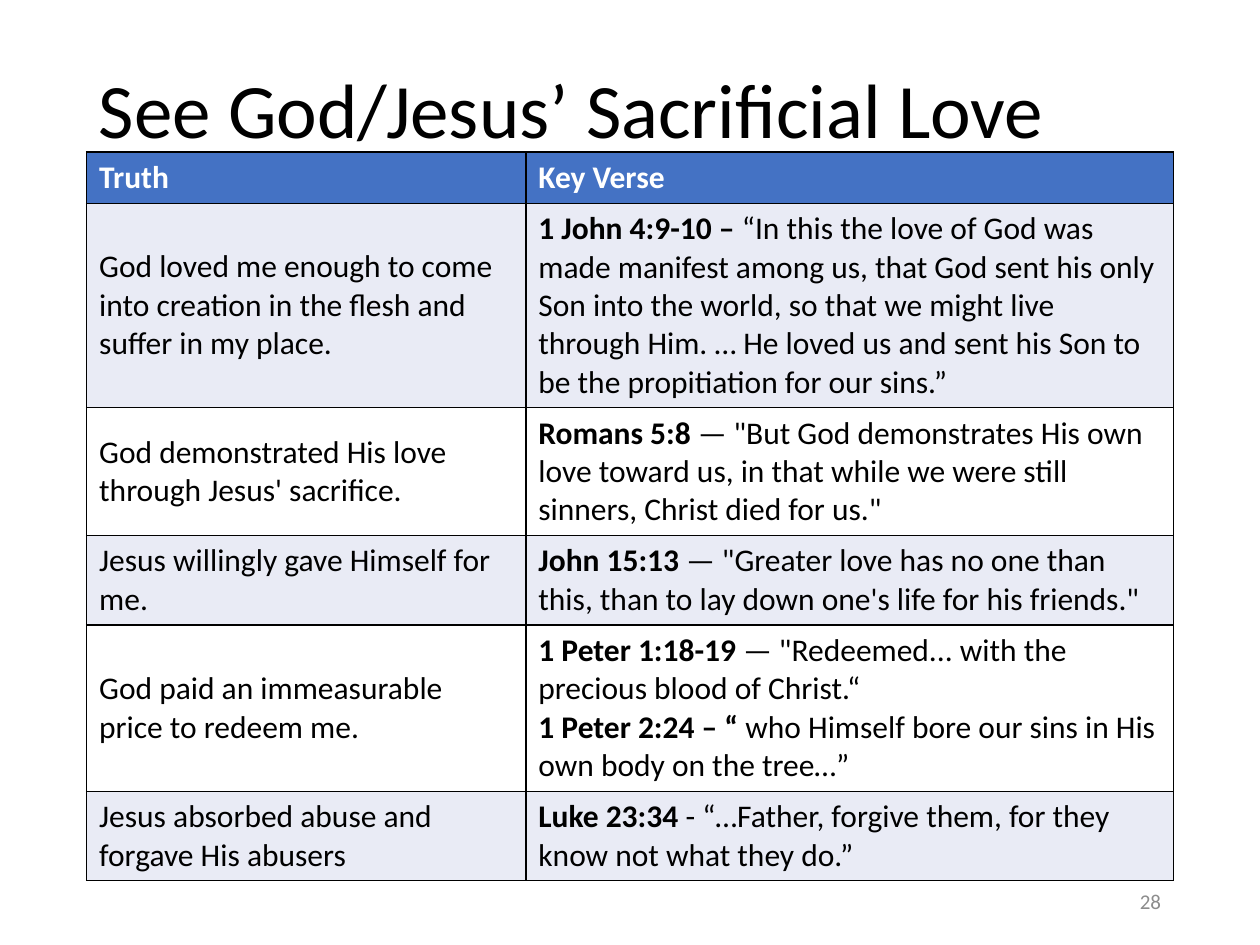
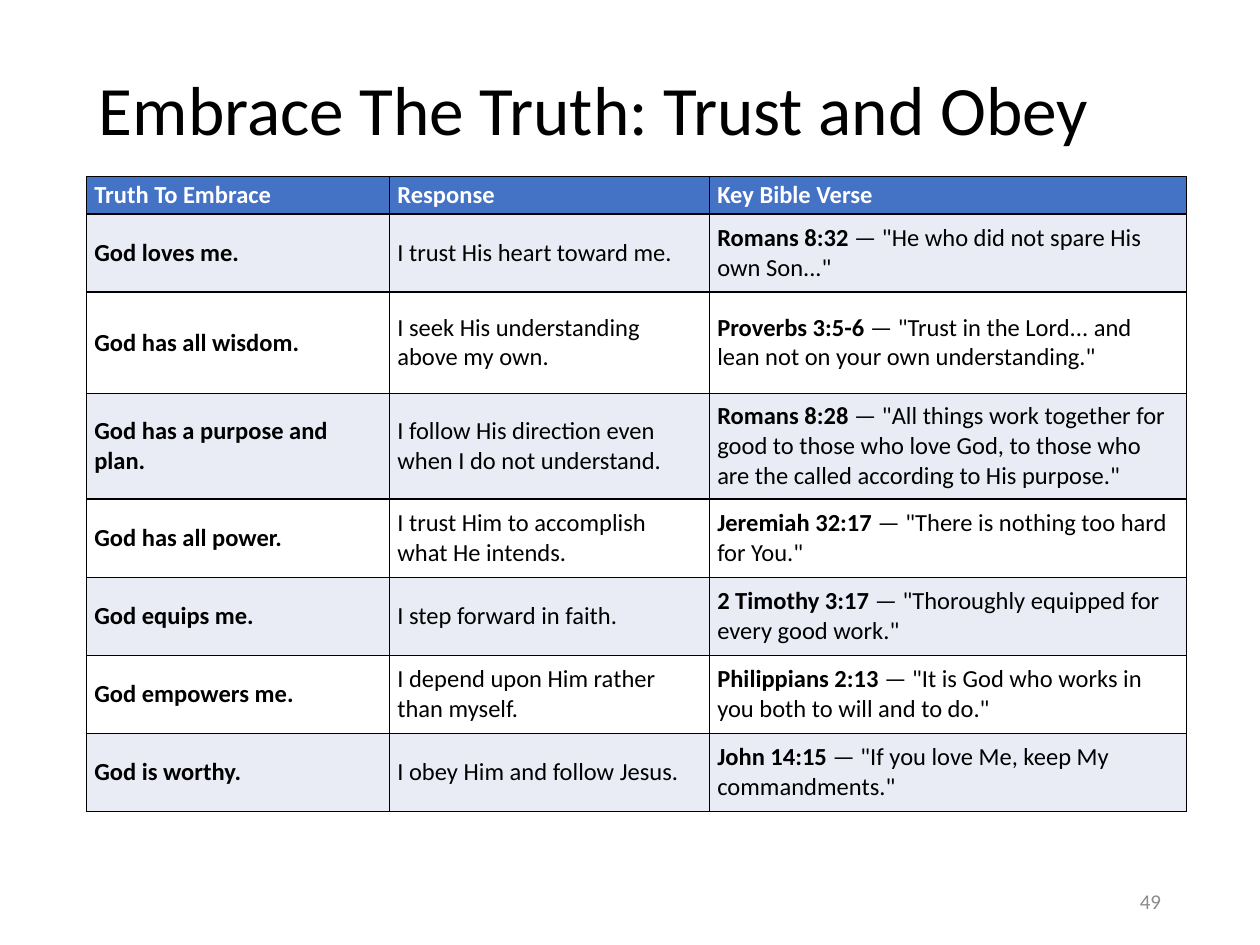
from lxml import etree
from pptx import Presentation
from pptx.dml.color import RGBColor
from pptx.enum.text import MSO_ANCHOR, PP_ALIGN
from pptx.oxml.ns import qn
from pptx.util import Pt

MIDDLE = MSO_ANCHOR.MIDDLE
LEFT = PP_ALIGN.LEFT
RIGHT = PP_ALIGN.RIGHT
BLACK = RGBColor(0x00, 0x00, 0x00)
WHITE = RGBColor(0xFF, 0xFF, 0xFF)
BLUE = RGBColor(0x44, 0x72, 0xC4)
PALE = RGBColor(0xE9, 0xEB, 0xF5)
GRAY = RGBColor(0x8C, 0x8C, 0x8C)
FONT = "Calibri"
EDGE = 49.5
WIDTH = 621

LOVE = [
    ["Truth|", "Key Verse|"],
    ["God loved me enough to come into creation in the flesh and suffer in my place.",
     "1 John 4:9-10 –| “In this the love of God was made manifest among us, that God "
     "sent his only Son into the world, so that we might live through Him. … He loved "
     "us and sent his Son to be the propitiation for our sins.”"],
    ["God demonstrated His love through Jesus' sacrifice.",
     "Romans 5:8| — \"But God demonstrates His own love toward us, in that while we "
     "were still sinners, Christ died for us.\""],
    ["Jesus willingly gave Himself for me.",
     "John 15:13| — \"Greater love has no one than this, than to lay down one's life "
     "for his friends.\""],
    ["God paid an immeasurable price to redeem me.",
     "1 Peter 1:18-19| — \"Redeemed... with the precious blood of Christ.“\n"
     "1 Peter 2:24 – “| who Himself bore our sins in His own body on the tree…”"],
    ["Jesus absorbed abuse and forgave His abusers",
     "Luke 23:34| - “…Father, forgive them, for they know not what they do.”"],
]

TRUST = [
    ["Truth To Embrace|", "Response|", "Key Bible Verse|"],
    ["God loves me.|", "I trust His heart toward me.",
     "Romans 8:32| — \"He who did not spare His own Son...\""],
    ["God has all wisdom.|", "I seek His understanding above my own.",
     "Proverbs 3:5-6| — \"Trust in the Lord... and lean not on your own understanding.\""],
    ["God has a purpose and plan.|",
     "I follow His direction even when I do not understand.",
     "Romans 8:28| — \"All things work together for good to those who love God, to "
     "those who are the called according to His purpose.\""],
    ["God has all power.|", "I trust Him to accomplish what He intends.",
     "Jeremiah 32:17| — \"There is nothing too hard for You.\""],
    ["God equips me.|", "I step forward in faith.",
     "2 Timothy 3:17| — \"Thoroughly equipped for every good work.\""],
    ["God empowers me.|", "I depend upon Him rather than myself.",
     "Philippians 2:13| — \"It is God who works in you both to will and to do.\""],
    ["God is worthy.|", "I obey Him and follow Jesus.",
     "John 14:15| — \"If you love Me, keep My commandments.\""],
]


def style(para, size, color):
    """Set the font of a whole paragraph."""
    para.font.name = FONT
    para.font.size = Pt(size)
    para.font.color.rgb = color


def add_text(slide, text, box, size, color, align=LEFT):
    """Add a one-line text box and return its paragraph."""
    frame = slide.shapes.add_textbox(*map(Pt, box)).text_frame
    frame.word_wrap = True
    frame.vertical_anchor = MIDDLE
    para = frame.paragraphs[0]
    para.text = text
    para.alignment = align
    style(para, size, color)
    return para


def add_frame(prs, title, size, page):
    """Add a slide with its title and page number."""
    slide = prs.slides.add_slide(prs.slide_layouts[6])
    para = add_text(slide, title, (EDGE, 28.75, WIDTH, 72), size, BLACK)
    para.line_spacing = 0.9
    add_text(slide, page, (508.5, 500.5, 162, 28.75), 12, GRAY, RIGHT)
    return slide


def add_rules(cell):
    """Draw a thin black line on each side of a cell."""
    props = cell._tc.get_or_add_tcPr()
    for side in ("a:lnL", "a:lnR", "a:lnT", "a:lnB"):
        line = etree.SubElement(props, qn(side), w=str(Pt(1)))
        fill = etree.SubElement(line, qn("a:solidFill"))
        etree.SubElement(fill, qn("a:srgbClr"), val=str(BLACK))


def fill_cell(cell, text, size, color):
    """Write lines into a cell, bold up to the bar in each."""
    frame = cell.text_frame
    for num, line in enumerate(text.split("\n")):
        para = frame.add_paragraph() if num else frame.paragraphs[0]
        style(para, size, color)
        lead, bar, rest = line.partition("|")
        if not (bar and rest):
            para.font.bold = bool(bar)
            para.add_run().text = lead
            continue
        for part, bold in ((lead, True), (rest, False)):
            run = para.add_run()
            run.text = part
            run.font.bold = bold


def add_grid(slide, data, top, cols, rows, size, inset=(7.2, 3.6)):
    """Add a ruled table with a blue head and pale bands."""
    box = (EDGE, top, sum(cols), sum(rows))
    table = slide.shapes.add_table(len(rows), len(cols), *map(Pt, box)).table
    table.first_row = table.horz_banding = False
    for col, width in zip(table.columns, cols):
        col.width = Pt(width)
    for num, (row, height, texts) in enumerate(zip(table.rows, rows, data)):
        row.height = Pt(height)
        band = BLUE if num == 0 else PALE if num % 2 else WHITE
        for cell, text in zip(row.cells, texts):
            add_rules(cell)
            cell.fill.solid()
            cell.fill.fore_color.rgb = band
            cell.vertical_anchor = MIDDLE
            cell.margin_left = cell.margin_right = Pt(inset[0])
            cell.margin_top = cell.margin_bottom = Pt(inset[1])
            fill_cell(cell, text, size, BLACK if num else WHITE)


def main():
    """Build both slides and save them."""
    prs = Presentation()
    prs.slide_width, prs.slide_height = Pt(720), Pt(540)
    slide = add_frame(prs, "See God/Jesus’ Sacrificial Love", 44, "28")
    add_grid(slide, LOVE, 87, (251, 370), (29.2, 116.8, 73.1, 51, 95.2, 51), 18)
    slide = add_frame(prs, "Embrace The Truth: Trust and Obey", 39.6, "49")
    add_grid(slide, TRUST, 101, (173.2, 182.8, 272.6),
             (21.2, 44.6, 58, 60.5) + (44.6,) * 4, 14, (4.4, 2.2))
    prs.save("out.pptx")


if __name__ == "__main__":
    main()
